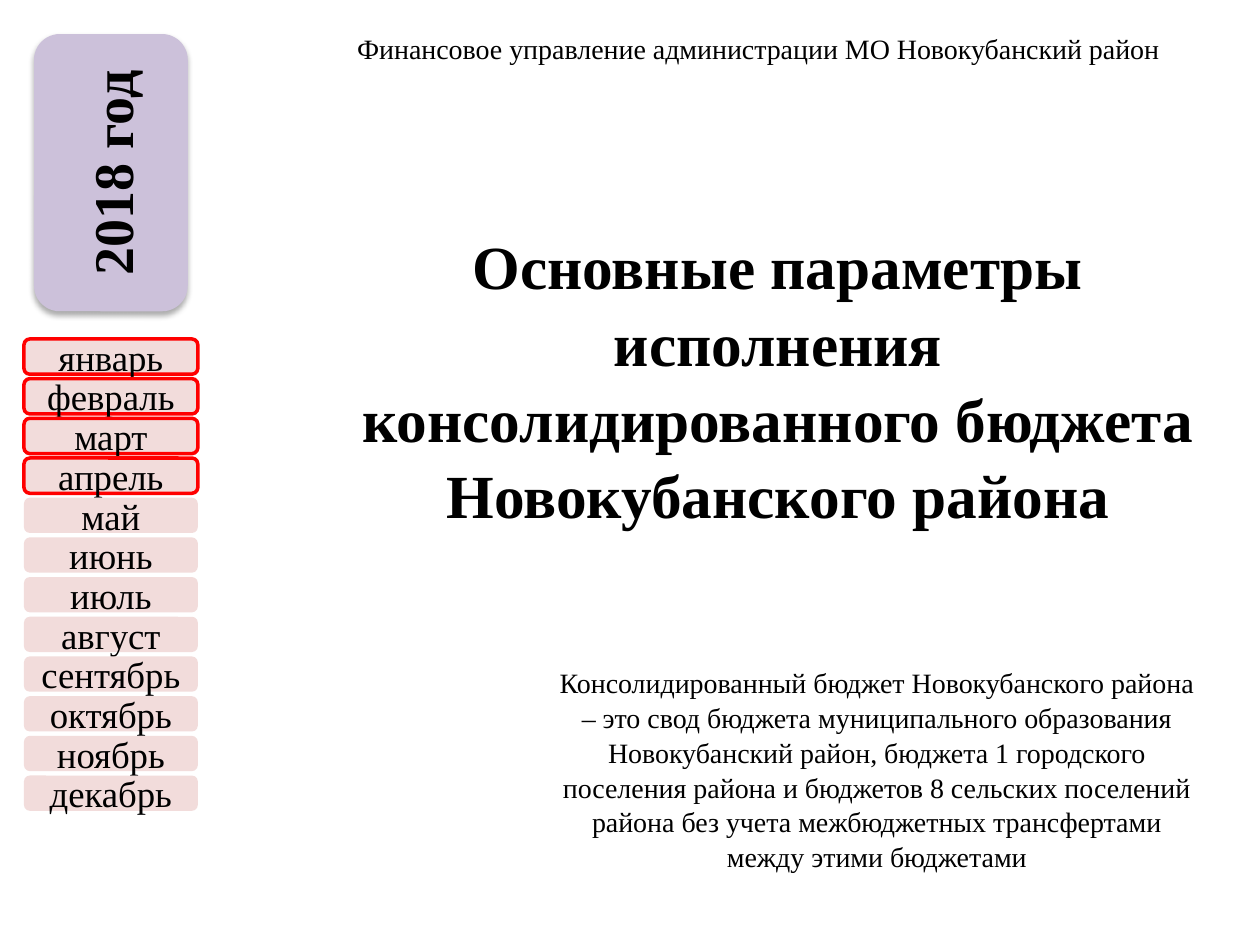
from lxml import etree
from pptx import Presentation
from pptx.dml.color import RGBColor
from pptx.enum import shapes, text
from pptx.oxml.ns import qn
from pptx.util import Inches, Pt

FONT = "Times New Roman"
BLACK = RGBColor(0x00, 0x00, 0x00)
RED = RGBColor(0xFF, 0x00, 0x00)
PINK = RGBColor(0xF2, 0xDC, 0xDB)
LILAC = RGBColor(0xCC, 0xC1, 0xDA)

MONTHS = ["январь", "февраль", "март", "апрель", "май", "июнь", "июль",
          "август", "сентябрь", "октябрь", "ноябрь", "декабрь"]
REPORTED_MONTHS = 4
FIRST_MONTH_TOP = 2.69
MONTH_STEP = 0.315


def write(shape, words, size, bold=False, spacing=None):
    """Fill a shape with one centred paragraph."""
    shape.text_frame.word_wrap = True
    para = shape.text_frame.paragraphs[0]
    para.alignment = text.PP_ALIGN.CENTER
    if spacing:
        para.line_spacing = spacing
    span = para.add_run()
    span.text = words
    span.font.name = FONT
    span.font.size = Pt(size)
    span.font.bold = bold
    span.font.color.rgb = BLACK


def add_text(page, place, words, size, bold=False, spacing=None):
    box = page.shapes.add_textbox(*map(Inches, place))
    write(box, words, size, bold, spacing)
    return box


def add_button(page, place, words, size, fill, outline=None, bold=False):
    button = page.shapes.add_shape(
        shapes.MSO_SHAPE.ROUNDED_RECTANGLE, *map(Inches, place))
    button.shadow.inherit = False
    button.fill.solid()
    button.fill.fore_color.rgb = fill
    if outline is None:
        button.line.fill.background()
    else:
        button.line.color.rgb = outline
        button.line.width = Pt(2)
    button.text_frame.vertical_anchor = text.MSO_ANCHOR.MIDDLE
    write(button, words, size, bold)
    return button


def add_soft_shadow(shape):
    """Drop a soft black shadow straight down."""
    effects = shape._element.spPr.find(qn("a:effectLst"))
    shadow = etree.SubElement(
        effects, qn("a:outerShdw"), blurRad=str(Pt(3.5)), dist=str(Pt(2.2)),
        dir="5400000", rotWithShape="0")
    color = etree.SubElement(shadow, qn("a:srgbClr"), val=str(BLACK))
    etree.SubElement(color, qn("a:alpha"), val="32000")


def main():
    deck = Presentation()
    deck.slide_width, deck.slide_height = Inches(10), Inches(7.5)
    page = deck.slides.add_slide(deck.slide_layouts[6])

    # Header
    header = add_text(
        page, (2.56, 0.25, 6.92, 0.27),
        "Финансовое управление администрации МО Новокубанский район", 16)
    header.text_frame.margin_top = header.text_frame.margin_bottom = 0

    # Year
    year = add_button(page, (-0.22, 0.76, 2.2, 1.22), "2018 год", 32, LILAC,
                      bold=True)
    year.rotation = 270
    add_soft_shadow(year)

    # Months, with the reported ones outlined
    for index, month in enumerate(MONTHS):
        top = FIRST_MONTH_TOP + index * MONTH_STEP
        outline = RED if index < REPORTED_MONTHS else None
        add_button(page, (0.19, top, 1.38, 0.28), month, 21, PINK, outline)

    # Title and definition
    add_text(page, (2.7, 1.74, 6.95, 2.46),
             "Основные параметры исполнения консолидированного бюджета "
             "Новокубанского района", 35, bold=True, spacing=1.04)
    add_text(page, (4.28, 5.22, 5.36, 1.72),
             "Консолидированный бюджет Новокубанского района – это свод "
             "бюджета муниципального образования Новокубанский район, "
             "бюджета 1 городского поселения района и бюджетов 8 сельских "
             "поселений района без учета межбюджетных трансфертами между "
             "этими бюджетами", 16, spacing=1.04)

    deck.save("out.pptx")


if __name__ == "__main__":
    main()
